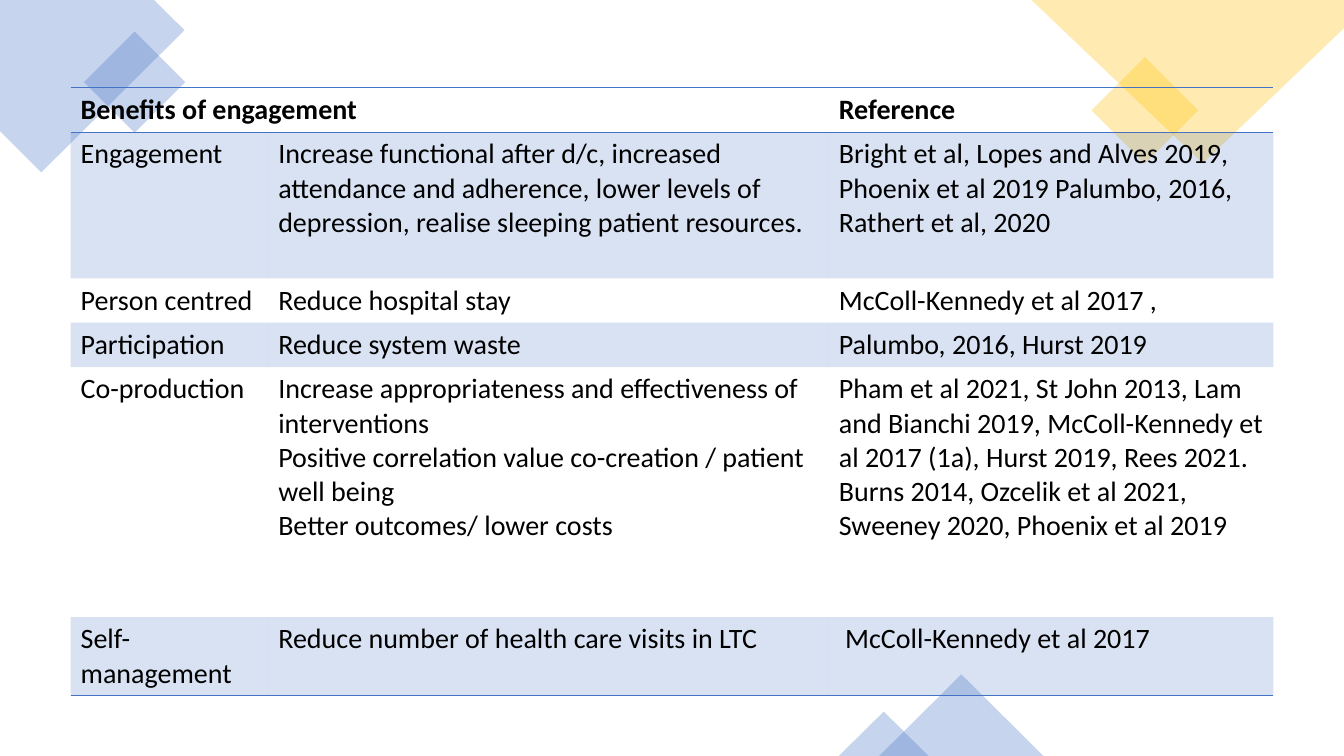
from dataclasses import dataclass

import lxml.etree
import pptx
import pptx.dml.color
import pptx.enum.shapes
import pptx.oxml.ns
import pptx.util

Inches = pptx.util.Inches
Shape = pptx.enum.shapes.MSO_SHAPE
qn = pptx.oxml.ns.qn


@dataclass(frozen=True)
class Theme:
    font: str = "Calibri"
    size: int = 20
    text: str = "000000"
    blue: str = "4472C4"
    gold: str = "FFC000"
    decor_opacity: int = 30
    band_opacity: int = 20
    border_width: int = 1


def set_fill(fill, color, opacity):
    """Fill with a solid colour at an opacity in percent."""
    fill.solid()
    fill.fore_color.rgb = pptx.dml.color.RGBColor.from_string(color)
    color_element = fill._xPr.find(qn("a:solidFill"))[0]
    lxml.etree.SubElement(color_element, qn("a:alpha"), val=str(opacity * 1000))


def write_text(frame, text, font, size, color, bold=False):
    """Write text into a frame, one paragraph per line."""
    frame.word_wrap = True
    for index, line in enumerate(text.split("\n")):
        para = frame.add_paragraph() if index else frame.paragraphs[0]
        span = para.add_run()
        span.text = line
        span.font.name = font
        span.font.size = pptx.util.Pt(size)
        span.font.bold = bold
        span.font.color.rgb = pptx.dml.color.RGBColor.from_string(color)


class SlideBuilder:
    NO_STYLE = "{2D5ABB26-0587-4C30-8999-92F81FD0307C}"

    def __init__(self, page, theme):
        self.page = page
        self.theme = theme

    def finish_decor(self, shape, color):
        shape.shadow.inherit = False
        shape.line.fill.background()
        set_fill(shape.fill, color, self.theme.decor_opacity)

    def polygon(self, points, color):
        corners = [(Inches(x), Inches(y)) for x, y in points]
        builder = self.page.shapes.build_freeform(*corners[0])
        builder.add_line_segments(corners[1:], close=True)
        self.finish_decor(builder.convert_to_shape(), color)

    def preset(self, kind, left, top, width, height, color, rotation=0):
        shape = self.page.shapes.add_shape(
            kind, Inches(left), Inches(top), Inches(width), Inches(height))
        shape.rotation = rotation
        self.finish_decor(shape, color)

    def border(self, cell, side):
        """Draw the top (T) or bottom (B) border of a cell."""
        width = pptx.util.Pt(self.theme.border_width)
        line = lxml.etree.Element(qn(f"a:ln{side}"), w=str(int(width)))
        solid = lxml.etree.SubElement(line, qn("a:solidFill"))
        lxml.etree.SubElement(solid, qn("a:srgbClr"), val=self.theme.blue)
        cell._tc.get_or_add_tcPr().insert(0, line)

    def table(self, left, top, widths, heights, rows):
        """Add a banded table whose heading spans the first two columns."""
        theme = self.theme
        frame = self.page.shapes.add_table(
            len(rows), len(widths), Inches(left), Inches(top),
            Inches(sum(widths)), Inches(sum(heights)))
        table = frame.table
        table.first_row = table.horz_banding = False
        table._tbl.tblPr.find(qn("a:tableStyleId")).text = self.NO_STYLE
        for column, width in zip(table.columns, widths):
            column.width = Inches(width)
        for row, height in zip(table.rows, heights):
            row.height = Inches(height)
        table.cell(0, 0).merge(table.cell(0, 1))
        for row_index, texts in enumerate(rows):
            for column_index, text in enumerate(texts):
                cell = table.cell(row_index, column_index)
                cell.margin_left = cell.margin_right = Inches(0.1)
                cell.margin_top = cell.margin_bottom = Inches(0.05)
                if text:
                    write_text(cell.text_frame, text, font=theme.font, size=theme.size,
                               color=theme.text, bold=row_index == 0)
                if row_index % 2:
                    set_fill(cell.fill, theme.blue, theme.band_opacity)
                else:
                    cell.fill.background()
                if row_index in (0, len(rows) - 1):
                    self.border(cell, "B")
                if row_index == 0:
                    self.border(cell, "T")


BENEFITS = [
    ("Benefits of engagement", "", "Reference"),
    ("Engagement",
     "Increase functional after d/c, increased attendance and adherence, "
     "lower levels of depression, realise sleeping patient resources.",
     "Bright et al, Lopes and Alves 2019, Phoenix et al 2019 Palumbo, 2016, "
     "Rathert et al, 2020"),
    ("Person centred", "Reduce hospital stay", "McColl-Kennedy et al 2017 ,"),
    ("Participation", "Reduce system waste", "Palumbo, 2016, Hurst 2019"),
    ("Co-production",
     "Increase appropriateness and effectiveness of interventions\n"
     "Positive correlation value co-creation / patient well being\n"
     "Better outcomes/ lower costs",
     "Pham et al 2021, St John 2013, Lam and Bianchi 2019, McColl-Kennedy et al "
     "2017 (1a), Hurst 2019, Rees 2021. Burns 2014, Ozcelik et al 2021, "
     "Sweeney 2020, Phoenix et al 2019"),
    ("Self-management", "Reduce number of health care visits in LTC",
     " McColl-Kennedy et al 2017"),
]


def main():
    deck = pptx.Presentation()
    deck.slide_width = Inches(13.33)
    deck.slide_height = Inches(7.5)
    theme = Theme()
    builder = SlideBuilder(deck.slides.add_slide(deck.slide_layouts[6]), theme)

    builder.polygon([(1.53, 0), (0, 0), (0, 1.3), (0.41, 1.71), (1.83, 0.3)], theme.blue)
    builder.preset(Shape.RECTANGLE, 0.98, 0.46, 0.71, 0.71, theme.blue, rotation=45)
    builder.preset(Shape.RECTANGLE, 10.98, 0.72, 0.75, 0.75, theme.gold, rotation=45)
    builder.polygon([(13.33, 0), (10.23, 0), (11.93, 1.62), (13.33, 0.28)], theme.gold)
    builder.preset(Shape.ISOSCELES_TRIANGLE, 8.72, 6.69, 1.63, 0.81, theme.blue)
    builder.preset(Shape.ISOSCELES_TRIANGLE, 8.32, 7.06, 0.89, 0.44, theme.blue)

    builder.table(0.7, 0.87, widths=[1.96, 5.56, 4.41],
                  heights=[0.44, 1.45, 0.44, 0.44, 2.48, 0.77], rows=BENEFITS)
    deck.save("out.pptx")


if __name__ == "__main__":
    main()
